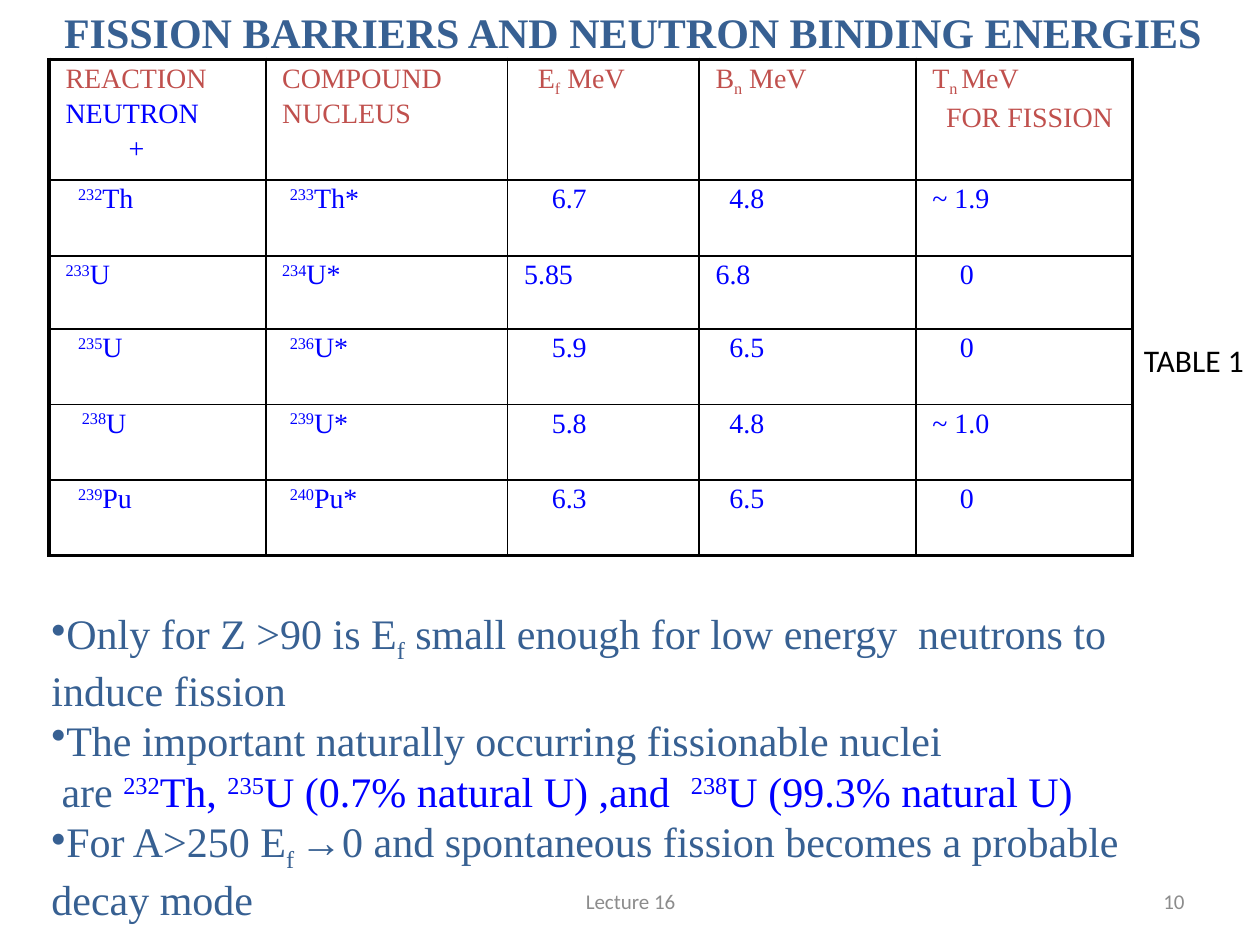
from dataclasses import dataclass
from pptx import Presentation
from pptx.dml.color import RGBColor
from pptx.enum.text import MSO_ANCHOR, PP_ALIGN
from pptx.oxml import parse_xml
from pptx.oxml.ns import nsdecls
from pptx.util import Inches, Pt


@dataclass(frozen=True)
class Theme:
    serif: str = "Times New Roman"
    sans: str = "Calibri"
    navy: str = "376092"
    red: str = "C0504D"
    blue: str = "0000FF"
    gray: str = "8C8C8C"
    black: str = "000000"
    large: float = 24
    label: float = 18
    cell: float = 16
    small: float = 12
    thin: float = 1
    thick: float = 2.25


@dataclass
class Line:
    spans: list
    indent: float = 0
    bullet: bool = False


SHIFTS = {"^": "30000", "_": "-25000"}


def assign(target, values):
    for name, value in values.items():
        setattr(target, name, value)


class Board:
    def __init__(self, deck, theme):
        self.deck = deck
        self.theme = theme
        self.slide = deck.slides.add_slide(deck.slide_layouts[6])

    def place(self, box):
        x, y, w, h = box
        wide, high = self.deck.slide_width, self.deck.slide_height
        return [int(v) for v in (x * wide / 100, y * high / 75, w * wide / 100, h * high / 75)]

    def fill(self, frame, lines, face, size, bold=False, align=PP_ALIGN.LEFT, gap=0):
        for n, line in enumerate(lines):
            para = frame.add_paragraph() if n else frame.paragraphs[0]
            para.alignment = align
            if n and gap:
                para.space_before = Pt(gap)
            props = para._p.get_or_add_pPr()
            props.set("marL", str(Inches(line.indent)))
            props.set("indent", "0")
            if line.bullet:
                props.append(parse_xml(f'<a:buChar {nsdecls("a")} char="•"/>'))
            for text, color in line.spans:
                for part in text.split("|"):
                    run = para.add_run()
                    shift = SHIFTS.get(part[0])
                    run.text = part[1:] if shift else part
                    assign(run.font, {"name": face, "size": Pt(size), "bold": bold})
                    run.font.color.rgb = RGBColor.from_string(color)
                    if shift:
                        run._r.get_or_add_rPr().set("baseline", shift)

    def text(self, box, lines, face, size, anchor=MSO_ANCHOR.TOP, **style):
        frame = self.slide.shapes.add_textbox(*self.place(box)).text_frame
        assign(frame, {"word_wrap": True, "vertical_anchor": anchor})
        self.fill(frame, lines, face, size, **style)

    def border(self, cell, edges):
        props = cell._tc.get_or_add_tcPr()
        for n, (side, outer) in enumerate(edges.items()):
            width = Pt(self.theme.thick if outer else self.theme.thin)
            props.insert(n, parse_xml(
                f'<a:ln{side} {nsdecls("a")} w="{width}"><a:solidFill>'
                f'<a:srgbClr val="{self.theme.black}"/></a:solidFill></a:ln{side}>'))

    def table(self, x, y, widths, heights, data):
        box = self.place((x, y, sum(widths), sum(heights)))
        grid = self.slide.shapes.add_table(len(heights), len(widths), *box).table
        assign(grid, {"first_row": False, "horz_banding": False})
        for col, width in zip(grid.columns, widths):
            col.width = self.place((0, 0, width, 0))[2]
        for row, height in zip(grid.rows, heights):
            row.height = self.place((0, 0, 0, height))[3]
        side, top = Inches(0.13), Inches(0.03)
        inset = {"margin_left": side, "margin_right": side,
                 "margin_top": top, "margin_bottom": top}
        for r, row in enumerate(data):
            for c, lines in enumerate(row):
                cell = grid.cell(r, c)
                assign(cell, inset)
                cell.fill.background()
                self.border(cell, {"L": c == 0, "R": c == len(widths) - 1,
                                   "T": r == 0, "B": r == len(heights) - 1})
                self.fill(cell.text_frame, lines, self.theme.serif, self.theme.cell, gap=2.5)


def main():
    deck = Presentation()
    assign(deck, {"slide_width": Inches(10), "slide_height": Inches(7.5)})
    look = Theme()
    board = Board(deck, look)

    def plain(text, color, indent=0, bullet=False):
        return Line([(text, color)], indent, bullet)

    middle = MSO_ANCHOR.MIDDLE
    for box, words, align in (((71.7, 69.5, 23.3, 4), "10", PP_ALIGN.RIGHT),
                              ((34.2, 69.5, 31.7, 4), "Lecture 16", PP_ALIGN.CENTER)):
        board.text(box, [plain(words, look.gray)], look.sans, look.small, middle, align=align)

    title = "FISSION BARRIERS AND NEUTRON BINDING ENERGIES"
    board.text((1.6, 0, 96.1, 5), [plain(title, look.navy, 0.25)],
               look.serif, look.large, bold=True)

    head = [
        [plain("REACTION", look.red), plain("NEUTRON", look.blue), plain("+", look.blue, 0.5)],
        [plain("COMPOUND", look.red), plain("NUCLEUS", look.red)],
        [plain("E|_f| MeV", look.red, 0.11)],
        [plain("B|_n| MeV", look.red)],
        [plain("T|_n |MeV", look.red), plain("FOR FISSION", look.red, 0.11)],
    ]
    inset = (0.1, 0.06, 0.22, 0.11)
    flush = (0, 0, 0, 0)
    nuclei = [
        (232, "Th", "6.7", "4.8", "~ 1.9", inset),
        (233, "U", "5.85", "6.8", "0", flush),
        (235, "U", "5.9", "6.5", "0", inset),
        (238, "U", "5.8", "4.8", "~ 1.0", (0.13, *inset[1:])),
        (239, "Pu", "6.3", "6.5", "0", inset),
    ]
    data = [head]
    for mass, name, fission, bind, need, shift in nuclei:
        words = (f"^{mass}|{name}", f"^{mass + 1}|{name}*", fission, bind, need)
        shift = (*shift, 0.22 if need == "0" else 0)
        data.append([[plain(w, look.blue, s)] for w, s in zip(words, shift)])
    board.table(3.9, 4.7, (17.2, 19.2, 15.2, 17.2, 17.2), (9.6, 6, 5.8, 6, 6, 6), data)

    notes = [
        plain("Only for Z >90 is E|_f| small enough for low energy  neutrons to induce fission",
              look.navy, bullet=True),
        plain("The important naturally occurring fissionable nuclei", look.navy, bullet=True),
        Line([("are ", look.navy),
              ("^232|Th, |^235|U (0.7% natural U) ,and  |^238|U (99.3% natural U)", look.blue)],
             0.08),
        plain("For A>250 E|_f |→0 and spontaneous fission becomes a probable decay mode",
              look.navy, bullet=True),
    ]
    board.text((3.1, 47.7, 89.8, 25.2), notes, look.serif, look.large)
    board.text((89.8, 26.6, 10.2, 4), [plain("TABLE 1", look.black)], look.sans, look.label)
    deck.save("out.pptx")


if __name__ == "__main__":
    main()
